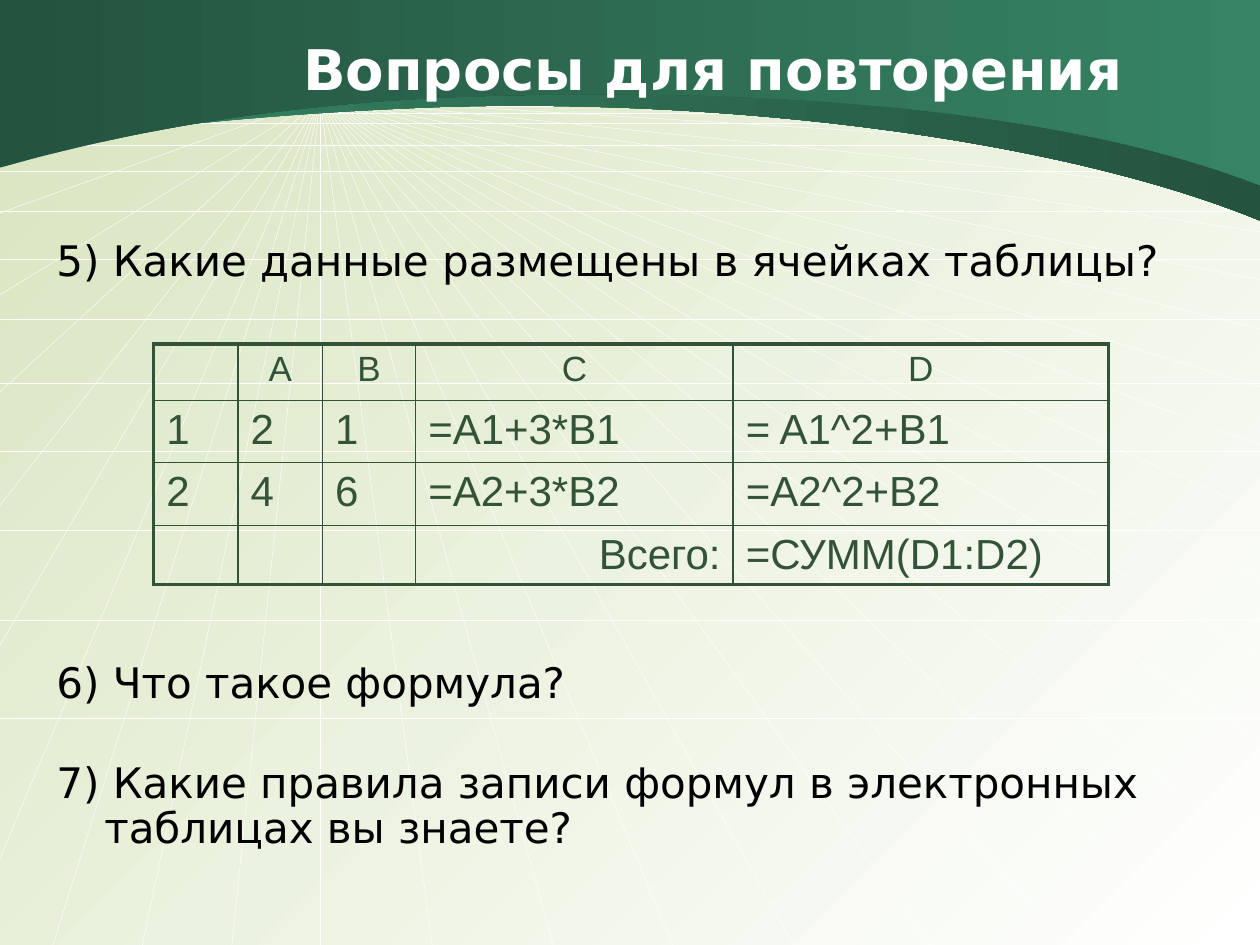
from dataclasses import dataclass
from typing import NamedTuple

from lxml.etree import SubElement
from pptx import Presentation
from pptx.dml.color import RGBColor
from pptx.dml.fill import FillFormat
from pptx.enum.text import MSO_ANCHOR, PP_ALIGN
from pptx.oxml.ns import qn
from pptx.slide import Slide
from pptx.table import _Cell
from pptx.text.text import _Paragraph
from pptx.util import Emu, Inches, Pt

# The slide is a grid of 10 columns by 7.5 rows
COLUMNS, ROWS = 10, 7.5
SLIDE_WIDTH, SLIDE_HEIGHT = Inches(10), Inches(7.5)
WHITE, BLACK, TABLE_GREEN = "FFFFFF", "000000", "335338"
LIGHT_BAND, DARK_BAND = "368463", "24533F"


class Point(NamedTuple):
    column: float
    row: float


@dataclass
class Band:
    start: Point
    curve_points: list[Point]  # three for each Bezier curve
    left_color: str
    right_color: str


@dataclass
class Question:
    text: str
    space_before: float


def across(columns: float) -> Emu:
    return Emu(round(SLIDE_WIDTH * columns / COLUMNS))


def down(rows: float) -> Emu:
    return Emu(round(SLIDE_HEIGHT * rows / ROWS))


def color(value: str) -> RGBColor:
    return RGBColor.from_string(value)


def set_font(paragraph: _Paragraph, name: str, size: float, value: str, bold: bool = False) -> None:
    paragraph.font.name = name
    paragraph.font.size = Pt(size)
    paragraph.font.bold = bold
    paragraph.font.color.rgb = color(value)


def set_gradient(fill: FillFormat, first: str, last: str, angle: float) -> None:
    fill.gradient()
    fill.gradient_angle = angle
    for stop, value, position in zip(fill.gradient_stops, (first, last), (0, 1)):
        stop.color.rgb = color(value)
        stop.position = position


def draw_ray(slide: Slide, start: Point, end: Point) -> None:
    ray = slide.shapes.add_connector(
        1, across(start.column), down(start.row), across(end.column), down(end.row))
    ray.line.color.rgb = color(WHITE)
    ray.line.width = Pt(0.25)
    SubElement(ray.element.spPr, qn("a:effectLst"))


def draw_band(slide: Slide, band: Band) -> None:
    outline = [band.start, *band.curve_points, Point(COLUMNS, 0)]
    builder = slide.shapes.build_freeform(0, 0)
    builder.add_line_segments([(across(p.column), down(p.row)) for p in outline], close=True)
    shape = builder.convert_to_shape()
    # Join each three segments of the lower edge into one Bezier curve
    segments = list(shape.element.iter(qn("a:lnTo")))[1:1 + len(band.curve_points)]
    for index in range(0, len(segments), 3):
        curve, *others = segments[index:index + 3]
        curve.tag = qn("a:cubicBezTo")
        for segment in others:
            curve.append(segment[0])
            segment.getparent().remove(segment)
    shape.shadow.inherit = False
    shape.line.fill.background()
    set_gradient(shape.fill, band.left_color, band.right_color, 0)


def set_borders(cell: _Cell, widths: dict[str, float]) -> None:
    properties = cell._tc.get_or_add_tcPr()
    for side, width in widths.items():
        line = SubElement(properties, qn(f"a:ln{side}"), w=str(Pt(width)))
        SubElement(SubElement(line, qn("a:solidFill")), qn("a:srgbClr"), val=TABLE_GREEN)


def draw_title(slide: Slide, text: str) -> None:
    title = slide.shapes.title
    title.left, title.top = across(1.62), down(0.23)
    title.width, title.height = across(8.08), down(0.62)
    title.text_frame.text = text
    title.text_frame.vertical_anchor = MSO_ANCHOR.MIDDLE
    paragraph = title.text_frame.paragraphs[0]
    paragraph.alignment = PP_ALIGN.CENTER
    set_font(paragraph, "DejaVu Sans", 32, WHITE, bold=True)
    # Bring the title in front of the bands
    title.element.getparent().append(title.element)


def draw_questions(slide: Slide, questions: list[Question]) -> None:
    box = slide.shapes.add_textbox(across(0.35), down(1.86), across(9), down(5.35))
    frame = box.text_frame
    frame.word_wrap = True
    for index, question in enumerate(questions):
        paragraph = frame.add_paragraph() if index else frame.paragraphs[0]
        paragraph.text = question.text
        paragraph.line_spacing = 0.9
        paragraph.space_before = Pt(question.space_before)
        properties = paragraph._p.get_or_add_pPr()
        properties.set("marL", str(Inches(0.38)))
        properties.set("indent", str(-Inches(0.38)))
        set_font(paragraph, "DejaVu Sans", 24, BLACK)


def draw_table(slide: Slide, rows: list[list[str]], widths: list[float], heights: list[float]) -> None:
    table = slide.shapes.add_table(
        len(rows), len(widths), across(1.22), down(2.73),
        across(sum(widths)), down(sum(heights))).table
    table.first_row = table.horz_banding = False
    for column, width in zip(table.columns, widths):
        column.width = across(width)
    last_row, last_column = len(rows) - 1, len(widths) - 1
    for r, values in enumerate(rows):
        table.rows[r].height = down(heights[r])
        for c, value in enumerate(values):
            cell = table.cell(r, c)
            on_edge = {"L": c == 0, "R": c == last_column, "T": r == 0, "B": r == last_row}
            set_borders(cell, {side: 2.25 if edge else 1 for side, edge in on_edge.items()})
            cell.fill.background()
            cell.margin_bottom = Inches(0.02)
            cell.text = value
            paragraph = cell.text_frame.paragraphs[0]
            if r == 0:
                paragraph.alignment = PP_ALIGN.CENTER
            elif value.endswith(":"):
                paragraph.alignment = PP_ALIGN.RIGHT
            set_font(paragraph, "Arial", 24 if r else 20, TABLE_GREEN)


VANISHING_POINT = Point(2.54, 0.78)
RIGHT_ENDS = [1, 1.23, 1.54, 1.84, 2.22, 2.61, 3.07, 3.53, 4.06, 4.59, 5.2, 5.89, 6.8]
BOTTOM_ENDS = [0.42, 1.13, 1.84, 2.54, 3.43, 4.39, 5.34, 6.3, 7.38, 8.46, 9.6]
LEFT_ENDS = [0.78, 0.97, 1.16, 1.69, 2.34, 3.11, 4.01, 5.12, 6.81]
HORIZONTALS = [0.84, 0.9, 0.98, 1.15, 1.36, 1.68, 2.06, 2.53, 3.04, 3.58, 4.21, 4.92, 5.7]

BANDS = [
    Band(Point(0, 1.19),
         [Point(0.11, 1.18), Point(1.33, 0.93), Point(3.47, 0.85),
          Point(5.61, 0.78), Point(8.31, 1.06), Point(10, 1.75)],
         LIGHT_BAND, DARK_BAND),
    Band(Point(0, 1.33),
         [Point(0.11, 1.31), Point(1.51, 0.85), Point(3.64, 0.77),
          Point(5.77, 0.69), Point(8.31, 0.81), Point(10, 1.47)],
         DARK_BAND, LIGHT_BAND),
]
QUESTIONS = [
    Question("5) Какие данные размещены в ячейках таблицы?", 0),
    Question("6) Что такое формула?", 215),
    Question("7) Какие правила записи формул в электронных таблицах вы знаете?", 31),
]
TABLE_ROWS = [
    ["", "A", "B", "C", "D"],
    ["1", "2", "1", "=A1+3*B1", "= A1^2+B1"],
    ["2", "4", "6", "=A2+3*B2", "=A2^2+B2"],
    ["", "", "", "Всего:", "=СУММ(D1:D2)"],
]


def main() -> None:
    presentation = Presentation()
    presentation.slide_width, presentation.slide_height = SLIDE_WIDTH, SLIDE_HEIGHT
    slide = presentation.slides.add_slide(presentation.slide_layouts[5])
    set_gradient(slide.background.fill, "D7E4BE", WHITE, 315)

    # Perspective net: rays from one point and horizontal lines
    ray_ends = [Point(COLUMNS, row) for row in RIGHT_ENDS]
    ray_ends += [Point(column, ROWS) for column in BOTTOM_ENDS]
    ray_ends += [Point(0, row) for row in LEFT_ENDS]
    for end in ray_ends:
        draw_ray(slide, VANISHING_POINT, end)
    for row in HORIZONTALS:
        draw_ray(slide, Point(0, row), Point(COLUMNS, row))

    # Curved header, then the content
    for band in BANDS:
        draw_band(slide, band)
    draw_title(slide, "Вопросы для повторения")
    draw_questions(slide, QUESTIONS)
    draw_table(slide, TABLE_ROWS, [0.67, 0.67, 0.74, 2.52, 2.98], [0.45, 0.49, 0.5, 0.47])
    presentation.save("out.pptx")


if __name__ == "__main__":
    main()
